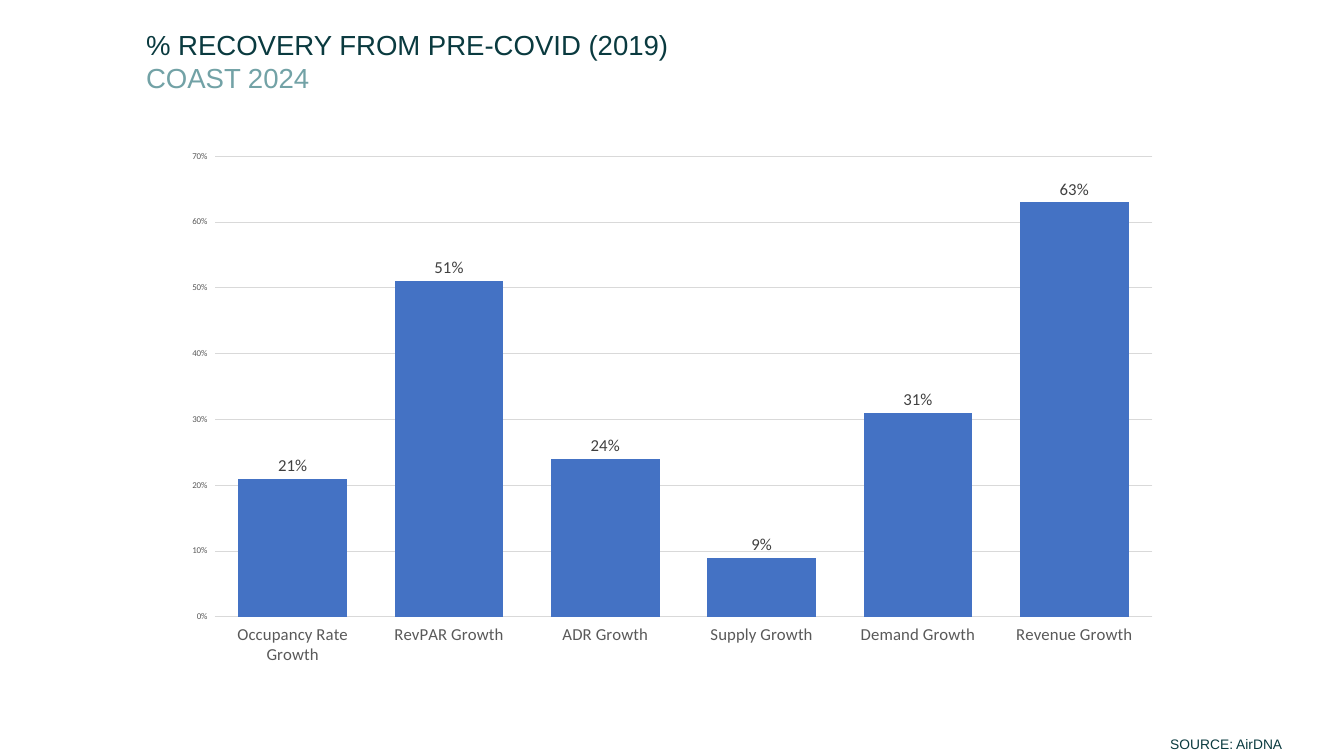
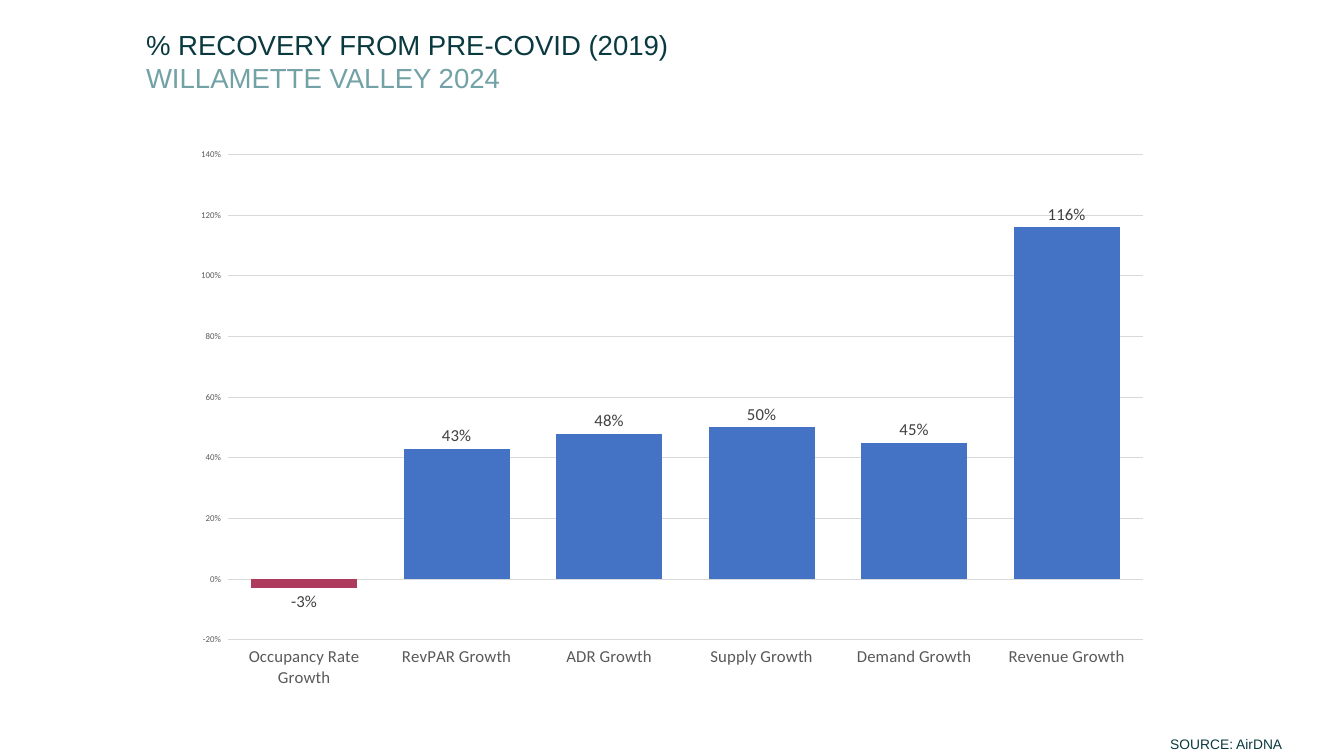
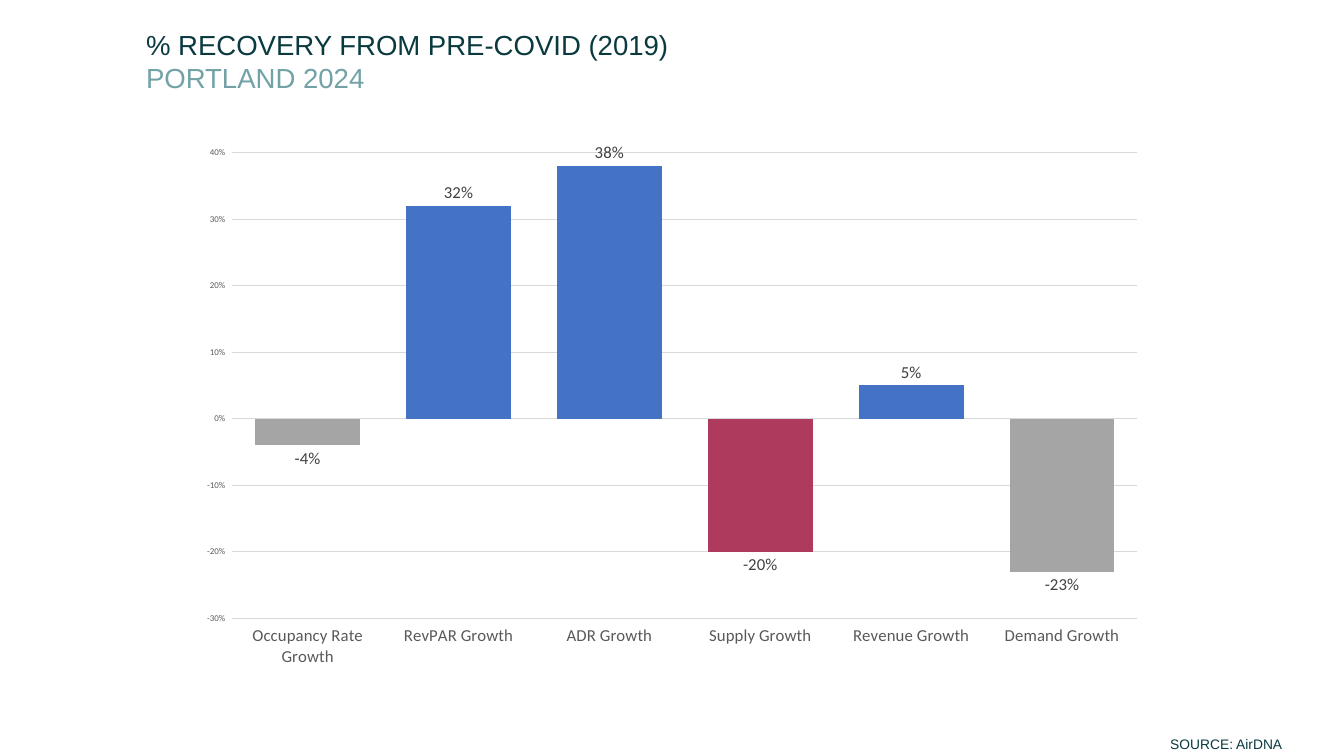
from dataclasses import dataclass

from pptx import Presentation
from pptx.chart.data import CategoryChartData
from pptx.dml.color import RGBColor
from pptx.enum.chart import XL_CHART_TYPE, XL_LABEL_POSITION, XL_TICK_LABEL_POSITION, XL_TICK_MARK
from pptx.enum.text import MSO_ANCHOR, MSO_AUTO_SIZE, PP_ALIGN
from pptx.util import Inches, Pt

COLUMN = XL_CHART_TYPE.COLUMN_CLUSTERED
OUTSIDE_END = XL_LABEL_POSITION.OUTSIDE_END
LOW = XL_TICK_LABEL_POSITION.LOW
NO_TICK = XL_TICK_MARK.NONE
TOP = MSO_ANCHOR.TOP
GROW = MSO_AUTO_SIZE.SHAPE_TO_FIT_TEXT
LEFT = PP_ALIGN.LEFT
TITLE_ONLY = 5


@dataclass(frozen=True)
class Theme:
    ink: str = "0A3A3F"
    teal: str = "72A2A6"
    blue: str = "4472C4"
    crimson: str = "AE3A5D"
    gray: str = "A5A5A5"
    rule: str = "D9D9D9"
    axis_text: str = "595959"
    label_text: str = "404040"
    black: str = "000000"
    text_font: str = "Arial"
    chart_font: str = "Calibri"
    title_size: int = 28
    source_size: int = 14
    label_size: int = 17
    scale_size: int = 9
    chart_size: int = 10
    rule_width: float = 0.75
    percent: str = r"* #,###,###,##0%;* \-#,###,###,##0%"


THEME = Theme()
HEADING = "% RECOVERY FROM PRE-COVID (2019)"
SOURCE = "SOURCE: AirDNA"

REGIONS = [
    {
        "name": "COAST 2024",
        "place": (2.43, 1.98, 14.11, 7.56),
        "scale": (0, 0.7, 0.1),
        "values": {
            "Occupancy Rate Growth": 0.21,
            "RevPAR Growth": 0.51,
            "ADR Growth": 0.24,
            "Supply Growth": 0.09,
            "Demand Growth": 0.31,
            "Revenue Growth": 0.63,
        },
        "accents": {},
    },
    {
        "name": "WILLAMETTE VALLEY 2024",
        "place": (2.56, 1.95, 13.84, 7.92),
        "scale": (-0.2, 1.4, 0.2),
        "values": {
            "Occupancy Rate Growth": -0.03,
            "RevPAR Growth": 0.43,
            "ADR Growth": 0.48,
            "Supply Growth": 0.5,
            "Demand Growth": 0.45,
            "Revenue Growth": 1.16,
        },
        "accents": {"Occupancy Rate Growth": THEME.crimson},
    },
    {
        "name": "PORTLAND 2024",
        "place": (2.65, 1.93, 13.67, 7.63),
        "scale": (-0.3, 0.4, 0.1),
        "values": {
            "Occupancy Rate Growth": -0.04,
            "RevPAR Growth": 0.32,
            "ADR Growth": 0.38,
            "Supply Growth": -0.2,
            "Revenue Growth": 0.05,
            "Demand Growth": -0.23,
        },
        "accents": {
            "Occupancy Rate Growth": THEME.gray,
            "Supply Growth": THEME.crimson,
            "Demand Growth": THEME.gray,
        },
    },
]


def set_all(target, values):
    for name, value in values.items():
        setattr(target, name, value)


def set_font(font, name, size, color):
    set_all(font, {"name": name, "size": Pt(size)})
    font.color.rgb = RGBColor.from_string(color)


def set_fill(shape_format, color):
    shape_format.fill.solid()
    shape_format.fill.fore_color.rgb = RGBColor.from_string(color)


class DeckBuilder:
    def __init__(self, theme):
        self.theme = theme
        self.deck = Presentation()
        set_all(self.deck, {"slide_width": Inches(18.96), "slide_height": Inches(10.67)})
        self.page = None

    def add_page(self):
        self.page = self.deck.slides.add_slide(self.deck.slide_layouts[TITLE_ONLY])

    def fill_text(self, box, lines, size):
        frame = box.text_frame
        set_all(frame, {"word_wrap": True, "vertical_anchor": TOP, "auto_size": GROW})
        for index, (text, color) in enumerate(lines):
            para = frame.add_paragraph() if index else frame.paragraphs[0]
            para.alignment = LEFT
            span = para.add_run()
            span.text = text
            set_font(span.font, self.theme.text_font, size, color)

    def add_title(self, heading, region):
        title = self.page.shapes.title
        set_all(title, {"left": Inches(1.96), "top": Inches(0.34),
                        "width": Inches(9.62), "height": Inches(1.04)})
        lines = [(heading, self.theme.ink), (region, self.theme.teal)]
        self.fill_text(title, lines, self.theme.title_size)

    def add_source(self, text):
        box = self.page.shapes.add_textbox(Inches(16.41), Inches(10.33), Inches(2.55), Inches(0.34))
        self.fill_text(box, [(text, self.theme.ink)], self.theme.source_size)

    def style_rule(self, line):
        line.color.rgb = RGBColor.from_string(self.theme.rule)
        line.width = Pt(self.theme.rule_width)

    def style_axes(self, chart, scale):
        theme = self.theme
        for axis, size in ((chart.category_axis, theme.label_size), (chart.value_axis, theme.scale_size)):
            set_all(axis, {"major_tick_mark": NO_TICK, "minor_tick_mark": NO_TICK,
                           "tick_label_position": LOW})
            set_font(axis.tick_labels.font, theme.chart_font, size, theme.axis_text)
        self.style_rule(chart.category_axis.format.line)
        values = chart.value_axis
        low, high, step = scale
        set_all(values, {"minimum_scale": low, "maximum_scale": high,
                         "major_unit": step, "has_major_gridlines": True})
        self.style_rule(values.major_gridlines.format.line)
        values.format.line.fill.background()
        set_all(values.tick_labels, {"number_format": theme.percent, "number_format_is_linked": False})

    def add_growth_chart(self, place, scale, values, accents):
        theme = self.theme
        data = CategoryChartData(number_format="0%")
        data.categories = list(values)
        data.add_series("Series 1", list(values.values()))
        chart = self.page.shapes.add_chart(COLUMN, *map(Inches, place), data).chart
        set_all(chart, {"has_title": False, "has_legend": False})
        set_font(chart.font, theme.chart_font, theme.chart_size, theme.black)
        self.style_axes(chart, scale)
        plot = chart.plots[0]
        set_all(plot, {"gap_width": 44, "overlap": -27, "vary_by_categories": False})
        series = plot.series[0]
        series.invert_if_negative = False
        set_fill(series.format, theme.blue)
        for index, category in enumerate(values):
            if category in accents:
                set_fill(series.points[index].format, accents[category])
        labels = series.data_labels
        set_all(labels, {"show_value": True, "position": OUTSIDE_END,
                         "number_format": theme.percent, "number_format_is_linked": False})
        set_font(labels.font, theme.chart_font, theme.label_size, theme.label_text)


def main():
    builder = DeckBuilder(THEME)
    for region in REGIONS:
        builder.add_page()
        builder.add_title(HEADING, region["name"])
        builder.add_source(SOURCE)
        builder.add_growth_chart(region["place"], region["scale"], region["values"], region["accents"])
    builder.deck.save("out.pptx")


if __name__ == "__main__":
    main()
